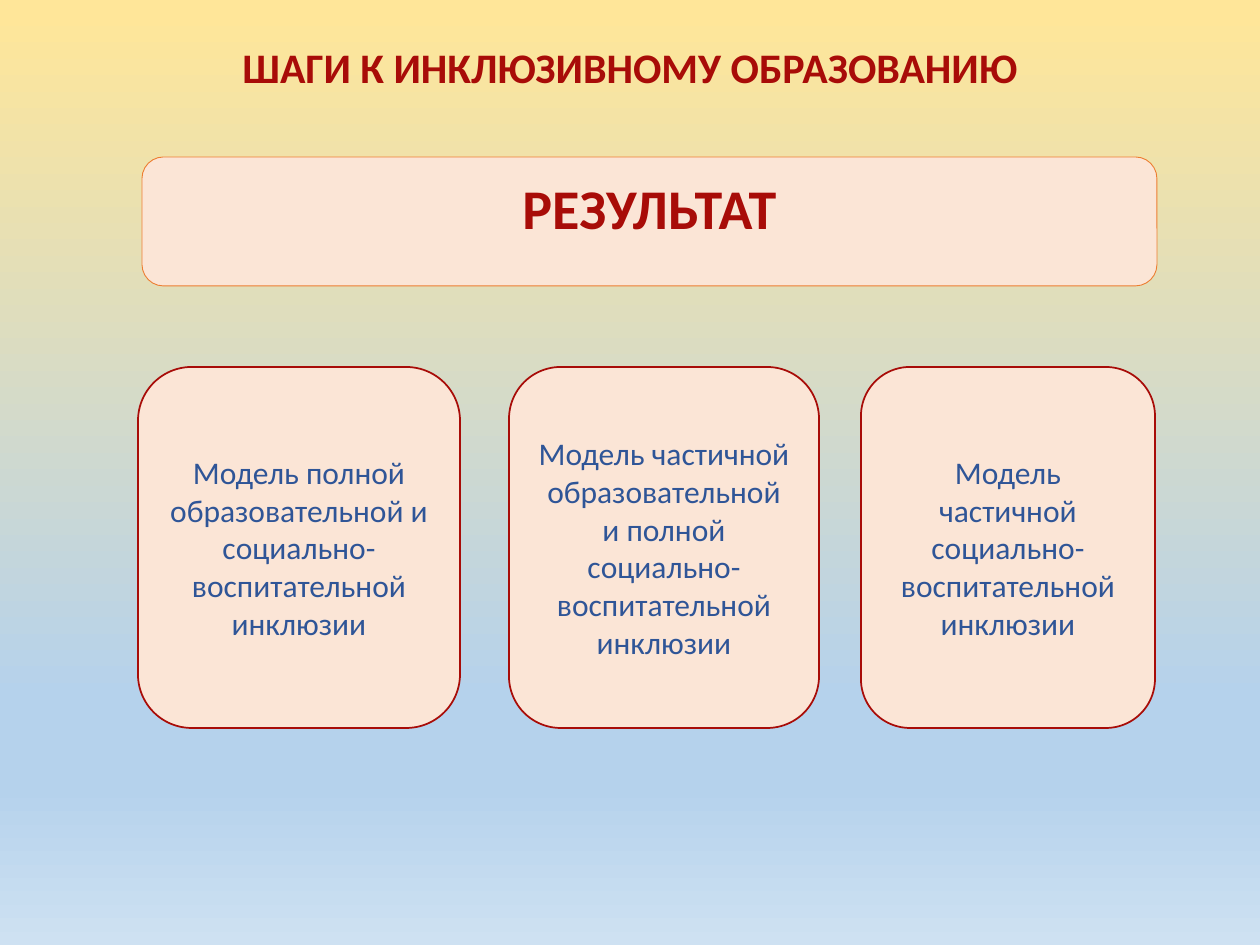
"""Build the slide on steps towards inclusive education."""
from copy import deepcopy

from pptx import Presentation
from pptx.dml.color import RGBColor
from pptx.enum.shapes import MSO_SHAPE
from pptx.enum.text import MSO_ANCHOR, PP_ALIGN
from pptx.oxml.ns import qn
from pptx.util import Emu, Pt

PX = 914400 // 126
ROUNDED = MSO_SHAPE.ROUNDED_RECTANGLE
CENTER = PP_ALIGN.CENTER
TOP, MIDDLE = MSO_ANCHOR.TOP, MSO_ANCHOR.MIDDLE
RED, BLUE, PEACH, ORANGE = "A80C08", "2F5597", "FBE5D6", "ED7D31"


def rgb(value):
    return RGBColor.from_string(value)


def write(shape, text, size, color, bold=False, anchor=MIDDLE, top=6, spacing=1.0):
    frame = shape.text_frame
    frame.word_wrap = True
    frame.vertical_anchor = anchor
    frame.margin_top = Emu(top * PX)
    frame.text = text
    paragraph = frame.paragraphs[0]
    paragraph.alignment = CENTER
    paragraph.line_spacing = spacing
    font = paragraph.runs[0].font
    font.name, font.size, font.bold = "Calibri", Pt(size), bold
    font.color.rgb = rgb(color)


prs = Presentation()
prs.slide_width, prs.slide_height = Emu(1260 * PX), Emu(945 * PX)
slide = prs.slides.add_slide(prs.slide_layouts[5])

sky = slide.background.fill
sky.gradient()
sky.gradient_angle = 270
stop_list = slide.element.find(".//" + qn("a:gsLst"))
for stop in list(stop_list):
    stop_list.append(deepcopy(stop))
sky_colors = [(0.01, "FFE699"), (0.74, "B5D2EC"), (0.83, "B5D2EC"), (1, "CEE1F2")]
for stop, (position, color) in zip(sky.gradient_stops, sky_colors):
    stop.position = position
    stop.color.rgb = rgb(color)

title = slide.shapes.title
title.left, title.top, title.width, title.height = (Emu(n * PX) for n in (87, 47, 1086, 86))
write(title, "ШАГИ К ИНКЛЮЗИВНОМУ ОБРАЗОВАНИЮ", 24, RED, bold=True, anchor=TOP, top=0, spacing=0.9)

result_format = {"size": 32, "color": RED, "bold": True, "anchor": TOP, "top": 10}
model_format = {"size": 18, "color": BLUE}
panels = [
    ((142, 157, 1015, 129), ORANGE, 0.5, "РЕЗУЛЬТАТ", result_format),
    ((138, 367, 322, 361), RED, 1,
     "Модель полной образовательной и социально-воспитательной инклюзии", model_format),
    ((509, 367, 310, 361), RED, 1,
     "Модель частичной образовательной и полной социально-воспитательной инклюзии", model_format),
    ((861, 367, 294, 361), RED, 1,
     "Модель частичной социально-воспитательной инклюзии", model_format),
]
for box, outline, weight, text, text_format in panels:
    panel = slide.shapes.add_shape(ROUNDED, *(Emu(n * PX) for n in box))
    panel.shadow.inherit = False
    panel.fill.solid()
    panel.fill.fore_color.rgb = rgb(PEACH)
    panel.line.color.rgb = rgb(outline)
    panel.line.width = Pt(weight)
    write(panel, text, **text_format)

prs.save("out.pptx")
